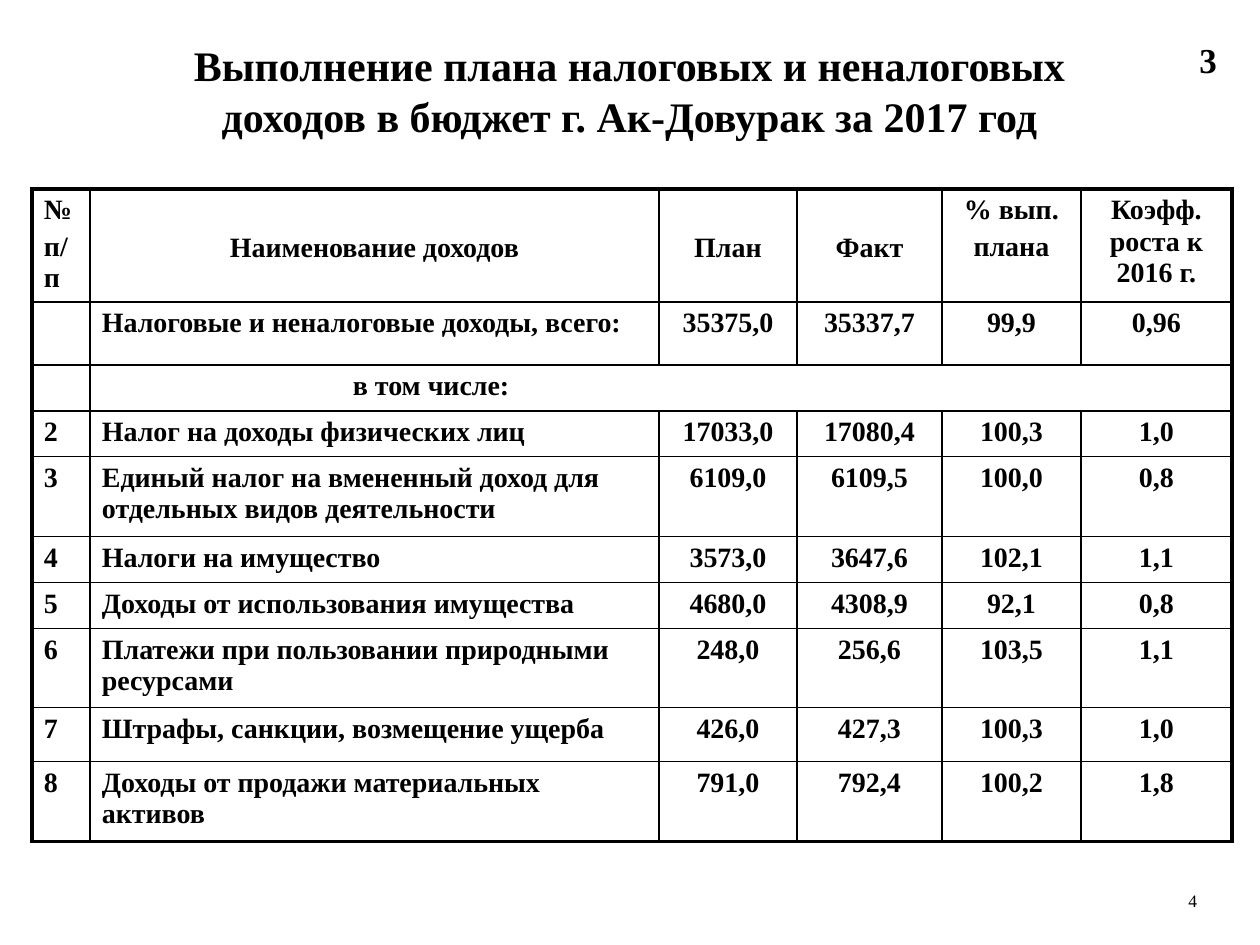
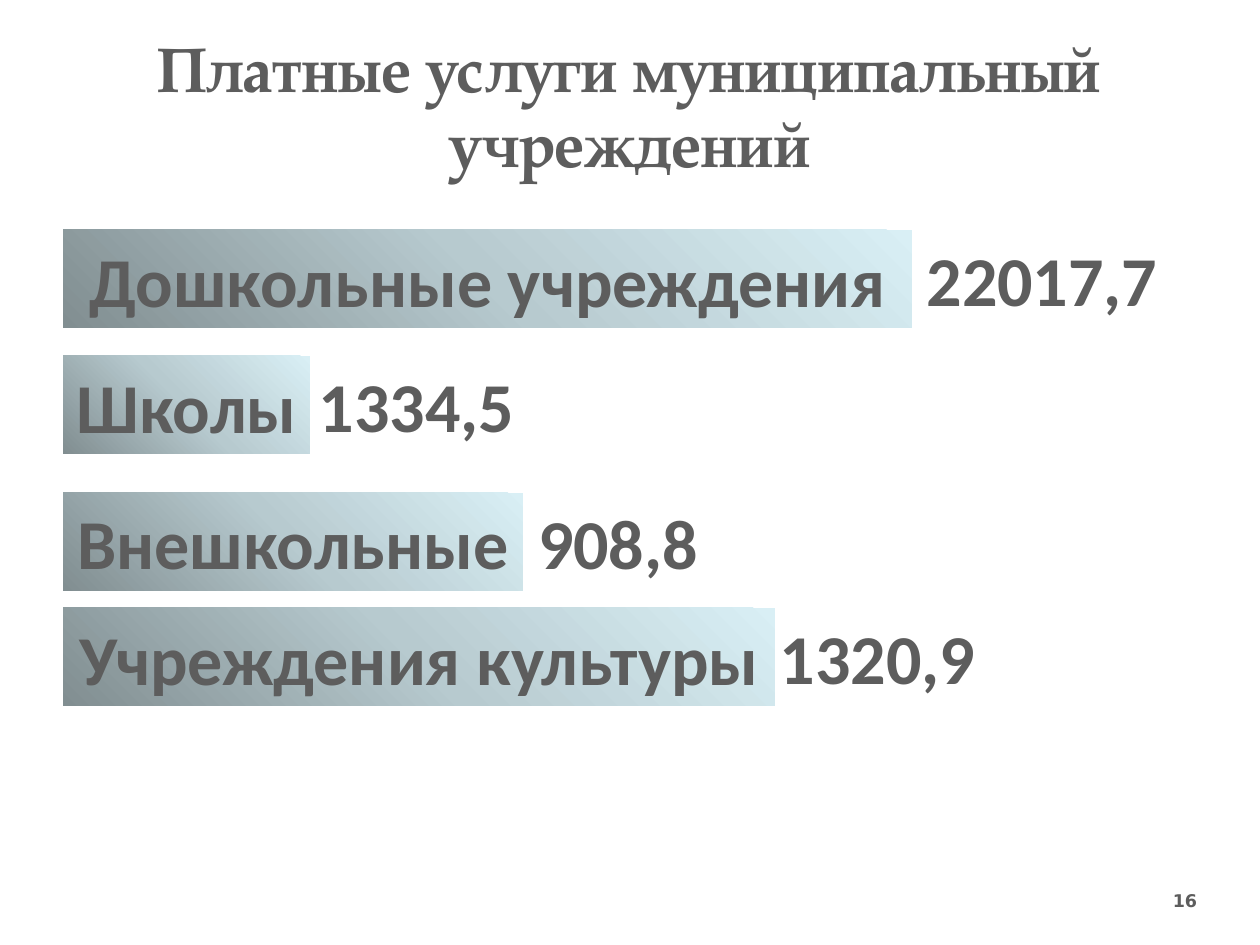
from dataclasses import dataclass

from lxml.etree import SubElement
from pptx import Presentation
from pptx.dml.color import RGBColor
from pptx.enum.shapes import MSO_SHAPE
from pptx.enum.text import MSO_ANCHOR, PP_ALIGN
from pptx.oxml import parse_xml
from pptx.oxml.ns import nsdecls, qn
from pptx.util import Emu, Pt

REVENUE_TITLE = "Выполнение плана налоговых и неналоговых доходов в бюджет г. Ак-Довурак за 2017 год"
REVENUE_HEADER = ["№\nп/п", "Наименование доходов", "План", "Факт", "% вып.\nплана", "Коэфф. роста к 2016 г."]
REVENUE_ROWS = [
    ["", "Налоговые и неналоговые доходы, всего:", "35375,0", "35337,7", "99,9", "0,96"],
    ["", "в том числе:", "", "", "", ""],
    ["2", "Налог на доходы физических лиц", "17033,0", "17080,4", "100,3", "1,0"],
    ["3", "Единый налог на вмененный доход для отдельных видов деятельности",
     "6109,0", "6109,5", "100,0", "0,8"],
    ["4", "Налоги на имущество", "3573,0", "3647,6", "102,1", "1,1"],
    ["5", "Доходы от использования имущества", "4680,0", "4308,9", "92,1", "0,8"],
    ["6", "Платежи при пользовании природными ресурсами", "248,0", "256,6", "103,5", "1,1"],
    ["7", "Штрафы, санкции, возмещение ущерба", "426,0", "427,3", "100,3", "1,0"],
    ["8", "Доходы от продажи материальных активов", "791,0", "792,4", "100,2", "1,8"],
]
COLUMN_WIDTHS = [58, 569, 138, 145, 139, 151]
ROW_HEIGHTS = [113, 63, 46, 44, 80, 46, 46, 75, 54, 80]
SUBHEADING_ROW = 2
CENTRED_HEADINGS = (1, 2, 3)

SERVICES_TITLE = "Платные услуги муниципальный учреждений"
SERVICES = [
    ("Дошкольные учреждения", "22017,7", 230, 849, 913, 258),
    ("Школы", "1334,5", 356, 247, 305, 223),
    ("Внешкольные", "908,8", 493, 460, 525, 186),
    ("Учреждения культуры", "1320,9", 608, 712, 766, 223),
]
BAR_LEFT, BAR_HEIGHT = 63, 98


@dataclass(frozen=True)
class Theme:
    black: str = "000000"
    grey: str = "5D5D5D"
    bar_stops: tuple = ((0, "818E91"), (50, "B7CACF"), (100, "D9EFF5"))
    serif: str = "Times New Roman"
    display: str = "TeX Gyre Pagella"
    sans: str = "Calibri"
    number_sans: str = "DejaVu Sans"
    table_title: int = 24
    services_title: int = 36
    table_text: int = 16
    service_text: int = 40
    corner_mark: int = 20
    page_number: int = 10
    outer_line: float = 2.25
    inner_line: float = 1


THEME = Theme()


def px(length):
    return Emu(length * 914400 // 126)


def write(frame, text, font, size, color, align=PP_ALIGN.LEFT, bold=True):
    for index, line in enumerate(text.split("\n")):
        para = frame.paragraphs[0] if index == 0 else frame.add_paragraph()
        para.text = line
        para.alignment = align
        if index:
            para.space_before = Pt(size * 0.2)
        para.font.name = font
        para.font.size = Pt(size)
        para.font.bold = bold
        para.font.color.rgb = RGBColor.from_string(color)


def add_text(page, place, text, *style, wrap=True, margins=None, anchor=MSO_ANCHOR.TOP, **options):
    box = page.shapes.add_textbox(*map(px, place))
    frame = box.text_frame
    frame.word_wrap = wrap
    frame.vertical_anchor = anchor
    if margins:
        (frame.margin_left, frame.margin_top,
         frame.margin_right, frame.margin_bottom) = map(px, margins)
    write(frame, text, *style, **options)


def add_page(deck, title, number, font, size, color, number_font, number_bold, height, bottom=0):
    page = deck.slides.add_slide(deck.slide_layouts[6])
    add_text(page, (121, 29, 1017, height), title, font, size, color, margins=(0, 0, 0, bottom),
             anchor=MSO_ANCHOR.MIDDLE, align=PP_ALIGN.CENTER)
    add_text(page, (903, 876, 294, 50), number, number_font, THEME.page_number, color,
             margins=(0, 0, 0, 0), anchor=MSO_ANCHOR.MIDDLE, align=PP_ALIGN.RIGHT, bold=number_bold)
    return page


def set_borders(cell, outer_sides):
    properties = cell._tc.get_or_add_tcPr()
    for index, side in enumerate("LRTB"):
        width = THEME.outer_line if side in outer_sides else THEME.inner_line
        line = SubElement(properties, qn(f"a:ln{side}"), w=str(Pt(width)))
        SubElement(SubElement(line, qn("a:solidFill")), qn("a:srgbClr"), val=THEME.black)
        properties.insert(index, line)


def add_revenue_table(page):
    contents = [REVENUE_HEADER, *REVENUE_ROWS]
    last_row, last_column = len(contents) - 1, len(COLUMN_WIDTHS) - 1
    place = (32, 189, sum(COLUMN_WIDTHS), sum(ROW_HEIGHTS))
    table = page.shapes.add_table(last_row + 1, last_column + 1, *map(px, place)).table
    table.first_row = table.horz_banding = False
    for column, width in zip(table.columns, COLUMN_WIDTHS):
        column.width = px(width)
    for row, height in zip(table.rows, ROW_HEIGHTS):
        row.height = px(height)
    for r, row in enumerate(contents):
        for c, text in enumerate(row):
            cell = table.cell(r, c)
            cell.fill.background()
            cell.margin_left = cell.margin_right = px(12)
            cell.margin_top = px(6 if text else 0)
            cell.margin_bottom = px(6 if text and r else 0)
            centred = c > 1 or (r == 0 and c == 1)
            write(cell.text_frame, text, THEME.serif, THEME.table_text, THEME.black,
                  align=PP_ALIGN.CENTER if centred else PP_ALIGN.LEFT)
            if r == 0 and c in CENTRED_HEADINGS:
                cell.vertical_anchor = MSO_ANCHOR.MIDDLE
            edges = {"L": c == 0, "R": c == last_column, "T": r == 0, "B": r == last_row}
            if r == SUBHEADING_ROW and c == 1:
                edges["R"] = True
            set_borders(cell, [side for side, outer in edges.items() if outer])
    subheading = table.cell(SUBHEADING_ROW, 1)
    subheading.margin_left = px(263)
    subheading.merge(table.cell(SUBHEADING_ROW, last_column))


def fill_from_corner(shape):
    shape.fill.background()
    stops = "".join(f'<a:gs pos="{position * 1000}"><a:srgbClr val="{color}"/></a:gs>'
                    for position, color in THEME.bar_stops)
    gradient = parse_xml(
        f'<a:gradFill {nsdecls("a")} rotWithShape="1"><a:gsLst>{stops}</a:gsLst>'
        '<a:path path="circle"><a:fillToRect t="100000" r="100000"/></a:path></a:gradFill>')
    properties = shape._element.spPr
    properties.replace(properties.find(qn("a:noFill")), gradient)


def add_service(page, name, value, top, bar_width, value_left, value_width):
    style = (THEME.sans, THEME.service_text, THEME.grey)
    bar = page.shapes.add_shape(MSO_SHAPE.RECTANGLE, *map(px, (BAR_LEFT, top, bar_width, BAR_HEIGHT)))
    bar.shadow.inherit = False
    bar.line.fill.background()
    fill_from_corner(bar)
    bar.text_frame.word_wrap = False
    write(bar.text_frame, name, *style, align=PP_ALIGN.CENTER)
    add_text(page, (value_left, top, value_width, BAR_HEIGHT), value, *style,
             wrap=False, align=PP_ALIGN.CENTER)


def main():
    deck = Presentation()
    deck.slide_width, deck.slide_height = px(1260), px(945)

    revenue = add_page(deck, REVENUE_TITLE, "4", THEME.serif, THEME.table_title, THEME.black,
                       THEME.serif, False, height=190, bottom=68)
    add_revenue_table(revenue)
    add_text(revenue, (1187, 32, 53, 55), "3", THEME.serif, THEME.corner_mark, THEME.black)

    services = add_page(deck, SERVICES_TITLE, "16", THEME.display, THEME.services_title, THEME.grey,
                        THEME.number_sans, True, height=152)
    for service in SERVICES:
        add_service(services, *service)

    deck.save("out.pptx")


if __name__ == "__main__":
    main()
